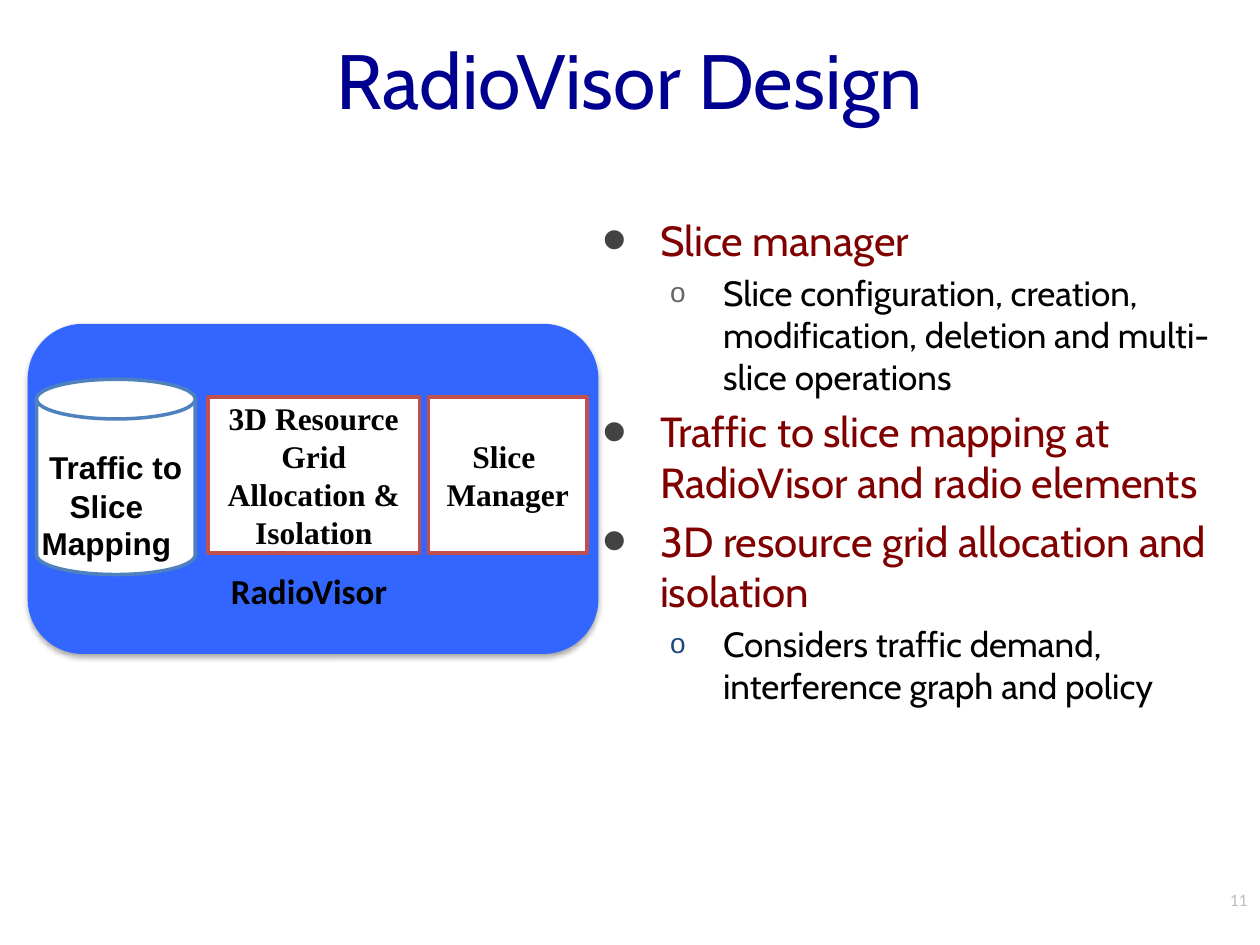
"""Build the RadioVisor design slide: a component diagram beside a bulleted outline."""
import pptx
import pptx.dml.color
import pptx.enum.shapes
import pptx.enum.text
import pptx.oxml
import pptx.util

COLORS = {
    "title": "000090", "topic": "800000", "text": "000000", "number": "BFBFBF",
    "dot": "434343", "ring": "666666", "ring_blue": "1F497D",
    "panel": "3366FF", "box": "FFFFFF", "box_line": "C0504D", "can_line": "4F81BD",
}
NAMESPACE = 'xmlns:a="http://schemas.openxmlformats.org/drawingml/2006/main"'
ALIGN = pptx.enum.text.PP_ALIGN
ANCHOR = pptx.enum.text.MSO_ANCHOR
SHAPE = pptx.enum.shapes.MSO_SHAPE

presentation = pptx.Presentation()
presentation.slide_width = pptx.util.Inches(10)
presentation.slide_height = pptx.util.Inches(7.5)
column = presentation.slide_width / 100
row = presentation.slide_height / 75
slide = presentation.slides.add_slide(presentation.slide_layouts[5])


def place(left, top, width, height):
    """Turn grid columns and rows into slide lengths."""
    return [round(n * unit) for n, unit in zip((left, top, width, height), (column, row) * 2)]


def write(shape, lines, font, color, align=ALIGN.CENTER, anchor=ANCHOR.MIDDLE):
    """Fill a shape with paragraphs, each a list of (text, size) runs."""
    frame = shape.text_frame
    for name, value in {"word_wrap": True, "vertical_anchor": anchor,
                        "auto_size": pptx.enum.text.MSO_AUTO_SIZE.NONE}.items():
        setattr(frame, name, value)
    for index, runs in enumerate(lines):
        paragraph = frame.paragraphs[0] if index == 0 else frame.add_paragraph()
        paragraph.alignment = align
        for text, size in runs:
            run = paragraph.add_run()
            run.text = text
            for name, value in {**font, "size": pptx.util.Pt(size)}.items():
                setattr(run.font, name, value)
            run.font.color.rgb = pptx.dml.color.RGBColor.from_string(COLORS[color])


title = slide.shapes.title
for name, value in zip(("left", "top", "width", "height"), place(5, 0, 90, 12.5)):
    setattr(title, name, value)
write(title, [[("RadioVisor Design", 44)]], {"name": "Cabin"}, "title")

outline = slide.shapes.add_textbox(*place(46.4, 16.5, 51.5, 54.9))
levels = [
    {"size": 24, "color": "topic", "margin": 5, "hang": 4.6, "bullet": "•", "scale": 167},
    {"size": 20, "color": "text", "margin": 10, "hang": 4.2, "bullet": "o", "scale": 80},
]
items = [
    (0, "dot", "Slice manager"),
    (1, "ring", "Slice configuration, creation, modification, deletion and multi-slice operations"),
    (0, "dot", "Traffic to slice mapping at RadioVisor and radio elements"),
    (0, "dot", "3D resource grid allocation and isolation"),
    (1, "ring_blue", "Considers traffic demand, interference graph and policy"),
]
write(outline, [[(text, levels[level]["size"])] for level, _, text in items],
      {"name": "Cabin"}, "text", ALIGN.LEFT, ANCHOR.TOP)
for paragraph, (level, bullet_color, _) in zip(outline.text_frame.paragraphs, items):
    style = levels[level]
    paragraph.level = level
    paragraph.space_before = pptx.util.Pt(style["size"] * 0.2)
    paragraph.runs[0].font.color.rgb = pptx.dml.color.RGBColor.from_string(COLORS[style["color"]])
    properties = paragraph._p.get_or_add_pPr()
    properties.set("marL", str(round(style["margin"] * column)))
    properties.set("indent", str(round(-style["hang"] * column)))
    for bullet in (
        f'<a:buClr {NAMESPACE}><a:srgbClr val="{COLORS[bullet_color]}"/></a:buClr>',
        f'<a:buSzPct {NAMESPACE} val="{style["scale"] * 1000}"/>',
        f'<a:buFont {NAMESPACE} typeface="Arial"/>',
        f'<a:buChar {NAMESPACE} char="{style["bullet"]}"/>',
    ):
        properties.append(pptx.oxml.parse_xml(bullet))

number = slide.shapes.add_textbox(*place(76.7, 69.4, 23.3, 4))
write(number, [[("11", 10)]], {"name": "Calibri"}, "number", ALIGN.RIGHT)

serif = {"name": "Times New Roman", "bold": True}
parts = [
    (SHAPE.ROUNDED_RECTANGLE, (2.2, 25.7, 45.3, 26.2), "panel", None,
     [[("RadioVisor ", 20)]], {"name": "Calibri", "bold": True}, ANCHOR.BOTTOM),
    (SHAPE.RECTANGLE, (34, 31.5, 12.6, 12.4), "box", "box_line",
     [[("Slice ", 18)], [("Manager", 18)]], serif, ANCHOR.MIDDLE),
    (SHAPE.RECTANGLE, (16.5, 31.5, 16.8, 12.4), "box", "box_line",
     [[("3D Resource Grid", 18)], [("Allocation & Isolation", 18)]], serif, ANCHOR.MIDDLE),
    (SHAPE.CAN, (2.9, 30.1, 12.6, 15.5), "box", "can_line", [], {}, ANCHOR.MIDDLE),
]
for kind, area, fill, line, lines, font, anchor in parts:
    shape = slide.shapes.add_shape(kind, *place(*area))
    shape.shadow.inherit = False
    shape.fill.solid()
    shape.fill.fore_color.rgb = pptx.dml.color.RGBColor.from_string(COLORS[fill])
    if line:
        shape.line.color.rgb = pptx.dml.color.RGBColor.from_string(COLORS[line])
        shape.line.width = pptx.util.Pt(2)
    else:
        shape.line.fill.background()
        shape.text_frame.margin_bottom = round(2.1 * row)
        shape._element.spPr.find(pptx.oxml.ns.qn("a:effectLst")).append(pptx.oxml.parse_xml(
            f'<a:outerShdw {NAMESPACE} blurRad="39370" dist="22860" dir="5400000" rotWithShape="0">'
            '<a:srgbClr val="000000"><a:alpha val="35000"/></a:srgbClr></a:outerShdw>'))
    write(shape, lines, font, "text", anchor=anchor)

mapping = slide.shapes.add_textbox(*place(0, 34.8, 17.6, 10.4))
write(mapping, [[(" ", 20), ("Traffic to Slice ", 18)], [("Mapping ", 18)]],
      {"name": "Arial", "bold": True}, "text", anchor=ANCHOR.TOP)

presentation.save("out.pptx")
